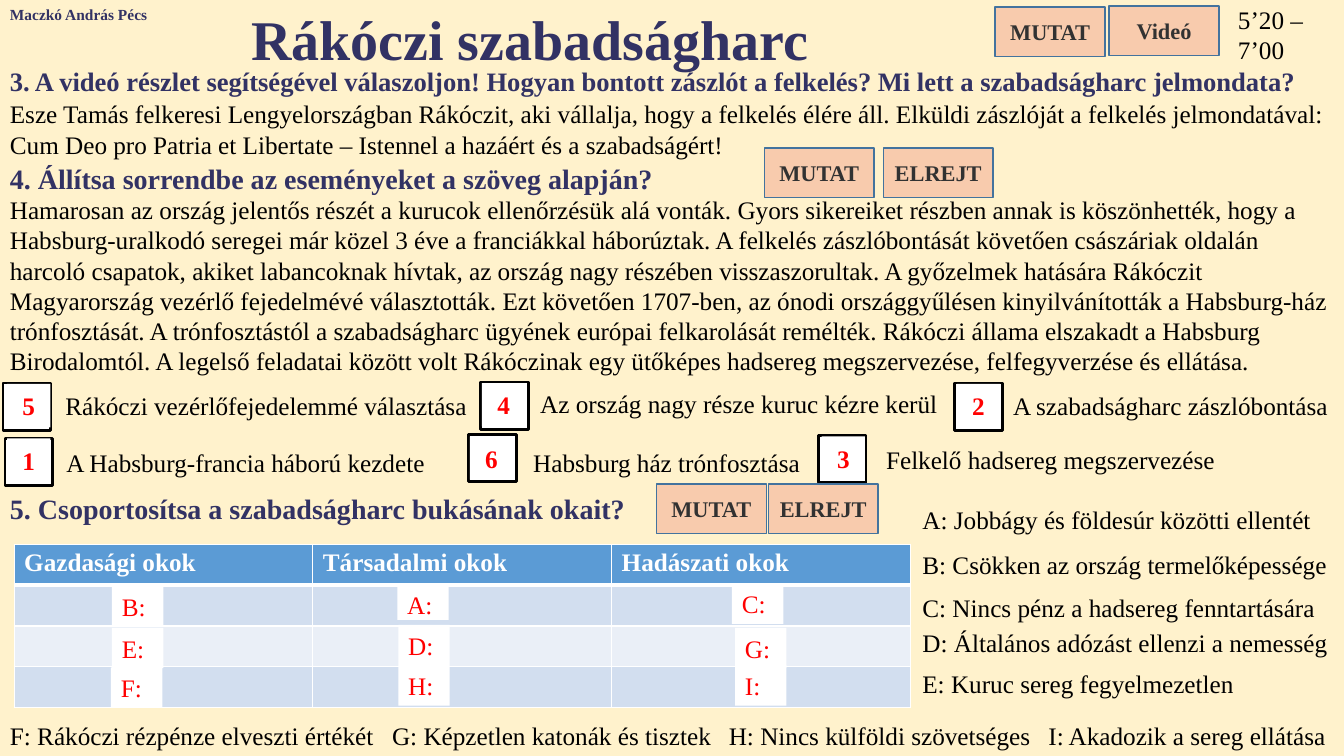
"""Build the worksheet slide on the Rákóczi war of independence."""
from lxml import etree
from pptx import Presentation
from pptx import util as u
from pptx.dml.color import RGBColor
from pptx.enum import shapes, text
from pptx.oxml.ns import qn

PX = 9144
FONT = "Times New Roman"
NAVY, BLACK, WHITE, RED = "323264", "000000", "FFFFFF", "FF0000"
CREAM, PEACH, STEEL, GRAY = "FFF2CC", "F8CBAD", "43739E", "323232"

HEADINGS = [
    ("Maczkó András Pécs", (0, 0, 159, 29), 11),
    ("3. A videó részlet segítségével válaszoljon! Hogyan bontott zászlót a felkelés? "
     "Mi lett a szabadságharc jelmondata?", (0, 59, 1333, 42), 19),
    ("4. Állítsa sorrendbe az eseményeket a szöveg alapján?", (0, 155, 685, 44), 20),
    ("5. Csoportosítsa a szabadságharc bukásának okait?", (0, 483, 646, 44), 20),
]
PASSAGES = [
    ("5’20 – 7’00", (1218, -1, 109, 71)),
    ("Esze Tamás felkeresi Lengyelországban Rákóczit, aki vállalja, hogy a felkelés élére áll. "
     "Elküldi zászlóját a felkelés jelmondatával: Cum Deo pro Patria et Libertate – "
     "Istennel a hazáért és a szabadságért!", (0, 93, 1333, 71)),
    ("Hamarosan az ország jelentős részét a kurucok ellenőrzésük alá vonták. Gyors sikereiket "
     "részben annak is köszönhették, hogy a Habsburg-uralkodó seregei már közel 3 éve a "
     "franciákkal háborúztak. A felkelés zászlóbontását követően császáriak oldalán harcoló "
     "csapatok, akiket labancoknak hívtak, az ország nagy részében visszaszorultak. A győzelmek "
     "hatására Rákóczit Magyarország vezérlő fejedelmévé választották. Ezt követően 1707-ben, az "
     "ónodi országgyűlésen kinyilvánították a Habsburg-ház trónfosztását. A trónfosztástól a "
     "szabadságharc ügyének európai felkarolását remélték. Rákóczi állama elszakadt a Habsburg "
     "Birodalomtól. A legelső feladatai között volt Rákóczinak egy ütőképes hadsereg "
     "megszervezése, felfegyverzése és ellátása.", (0, 188, 1333, 192)),
]
EVENTS = [
    ("5", (3, 380), (7, 381), "Rákóczi vezérlőfejedelemmé választása", (55, 382)),
    ("4", (477, 379), (478, 380), "Az ország nagy része kuruc kézre kerül", (526, 380)),
    ("2", (947, 380), (949, 381), "A szabadságharc zászlóbontása", (995, 382)),
    ("1", (5, 435), (7, 435), "A Habsburg-francia háború kezdete", (56, 439)),
    ("6", (465, 431), (466, 433), "Habsburg ház trónfosztása", (519, 439)),
    ("3", (812, 432), (815, 433), "Felkelő hadsereg megszervezése", (869, 436)),
]
CAUSES = [
    ("A: Jobbágy és földesúr közötti ellentét", 905, 495),
    ("B: Csökken az ország termelőképessége", 905, 540),
    ("C: Nincs pénz a hadsereg fenntartására", 905, 583),
    ("D: Általános adózást ellenzi a nemesség", 905, 617),
    ("E: Kuruc sereg fegyelmezetlen", 905, 658),
    ("F: Rákóczi rézpénze elveszti értékét", 0, 710),
    ("G: Képzetlen katonák és tisztek", 379, 710),
    ("H: Nincs külföldi szövetséges", 713, 710),
    ("I: Akadozik a sereg ellátása", 1030, 710),
]
COLUMNS = ["Gazdasági okok", "Társadalmi okok", "Hadászati okok"]
ROW_FILLS = ["5B9BD5", "D2DEEF", "EAEFF7", "D2DEEF"]
ANSWERS = [
    ("B:", 111, 582, 40), ("E:", 111, 623, 40), ("F:", 110, 662, 40),
    ("A:", 394, 580, 35), ("D:", 395, 620, 40), ("H:", 395, 660, 40),
    ("C:", 726, 579, 40), ("G:", 729, 623, 40), ("I:", 729, 660, 40),
]
BUTTONS = [
    ("MUTAT", 987, 7), ("Videó", 1100, 6),
    ("MUTAT", 758, 147), ("ELREJT", 876, 147),
    ("MUTAT", 651, 480), ("ELREJT", 762, 480),
]

deck = Presentation()
deck.slide_width, deck.slide_height = 1333 * PX, 750 * PX
page = deck.slides.add_slide(deck.slide_layouts[6])


def color(value):
    return RGBColor.from_string(value)


def write(frame, words, size=18, ink=BLACK, bold=False, center=False, middle=False):
    frame.word_wrap = True
    frame.vertical_anchor = text.MSO_ANCHOR.MIDDLE if middle else text.MSO_ANCHOR.TOP
    para = frame.paragraphs[0]
    para.alignment = text.PP_ALIGN.CENTER if center else text.PP_ALIGN.LEFT
    span = para.add_run()
    span.text = words
    span.font.name, span.font.size, span.font.bold = FONT, u.Pt(size), bold
    span.font.color.rgb = color(ink)


def add_text(words, area, **style):
    box = page.shapes.add_textbox(*(n * PX for n in area))
    write(box.text_frame, words, **style)


def add_box(area, fill=WHITE, line=None, weight=1, words="", **style):
    box = page.shapes.add_shape(shapes.MSO_SHAPE.RECTANGLE, *(n * PX for n in area))
    box.shadow.inherit = False
    box.fill.solid()
    box.fill.fore_color.rgb = color(fill)
    if line:
        box.line.color.rgb = color(line)
        box.line.width = u.Pt(weight)
    else:
        box.line.fill.background()
    if words:
        write(box.text_frame, words, **style)


def set_borders(cell, **weights):
    properties = cell._tc.get_or_add_tcPr()
    for place, (side, weight) in enumerate(weights.items()):
        edge = etree.Element(qn(f"a:ln{side}"), w=str(u.Pt(weight)))
        fill = etree.SubElement(edge, qn("a:solidFill"))
        etree.SubElement(fill, qn("a:srgbClr"), val=WHITE)
        properties.insert(place, edge)


def add_cause_table():
    frame = page.shapes.add_table(len(ROW_FILLS), len(COLUMNS),
                                  14 * PX, 540 * PX, 889 * PX, 162 * PX)
    for column in frame.table.columns:
        column.width = 889 * PX // len(COLUMNS)
    for i, fill in enumerate(ROW_FILLS):
        for j, title in enumerate(COLUMNS):
            cell = frame.table.cell(i, j)
            cell.fill.solid()
            cell.fill.fore_color.rgb = color(fill)
            set_borders(cell, L=1, R=1, T=3 if i == 1 else 1, B=3 if i == 0 else 1)
            if i == 0:
                write(cell.text_frame, title, ink=WHITE, bold=True)


def main():
    page.background.fill.solid()
    page.background.fill.fore_color.rgb = color(CREAM)
    add_text("Rákóczi szabadságharc", (152, 0, 747, 77), size=40, ink=NAVY, bold=True, center=True)
    for words, area, size in HEADINGS:
        add_text(words, area, size=size, ink=NAVY, bold=True)
    for words, area in PASSAGES:
        add_text(words, area)
    for number, frame, inner, words, label in EVENTS:
        add_text(words, (*label, 424 if label[0] < 900 else 336, 40))
        add_box((*frame, 47, 47), line=BLACK, weight=2)
        add_box((*inner, 43, 43), words=number, ink=RED, bold=True, center=True, middle=True)
    add_cause_table()
    for words, left, top in CAUSES:
        add_text(words, (left, top, 429 if left == 905 else 391, 40))
    for words, left, top, height in ANSWERS:
        add_box((left, top, 51, height), words=words, ink=RED)
    for words, left, top in BUTTONS:
        add_box((left, top, 109, 49), fill=PEACH, line=STEEL, words=words,
                size=16, ink=GRAY, bold=True, center=True, middle=True)
    deck.save("out.pptx")


if __name__ == "__main__":
    main()
